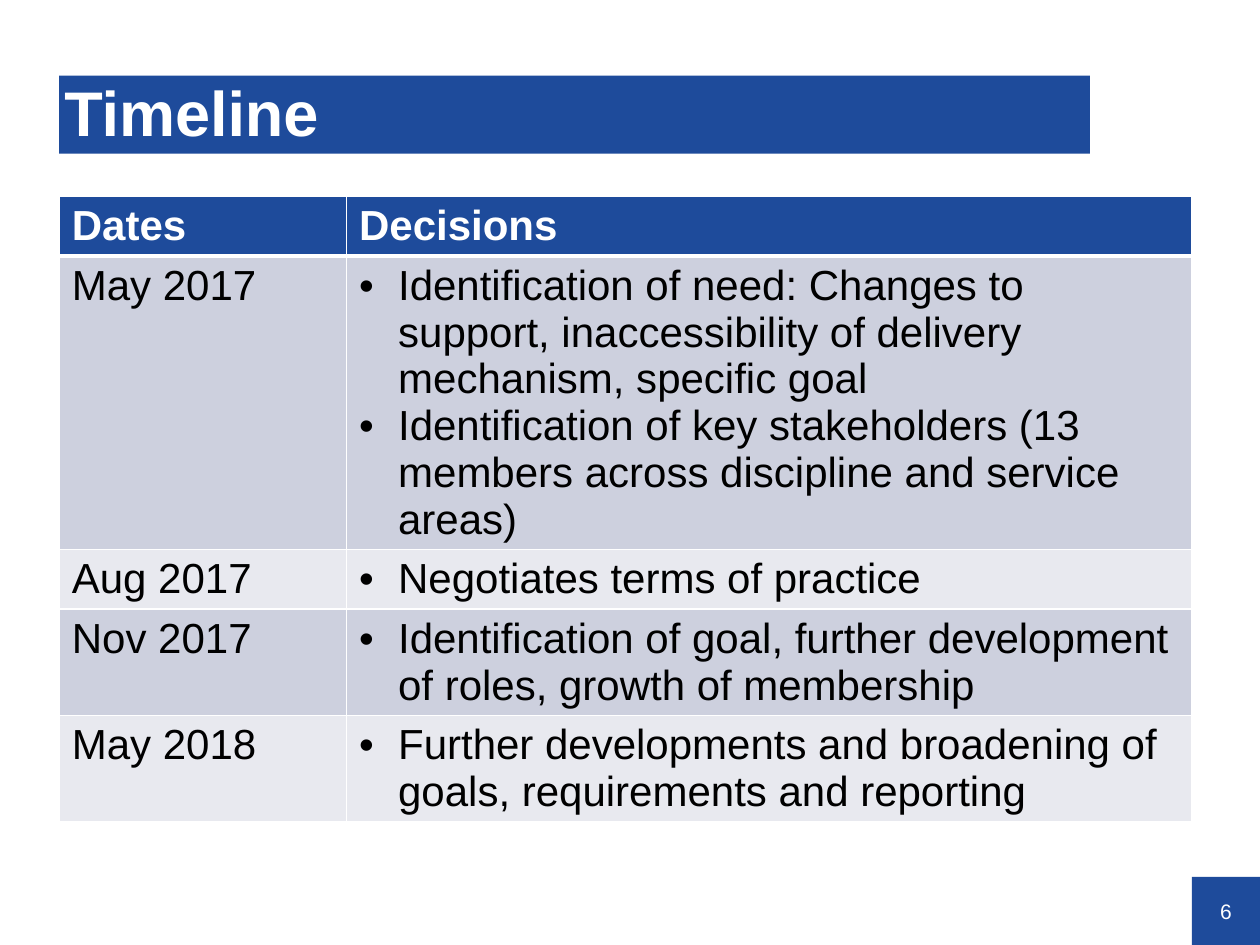
from dataclasses import dataclass
from lxml import etree
from pptx import Presentation
from pptx.dml.color import RGBColor
from pptx.enum.shapes import MSO_SHAPE
from pptx.enum.text import MSO_ANCHOR, MSO_AUTO_SIZE, PP_ALIGN
from pptx.oxml.ns import qn
from pptx.util import Emu, Inches, Pt

RECT = MSO_SHAPE.RECTANGLE
MIDDLE = MSO_ANCHOR.MIDDLE
NOFIT = MSO_AUTO_SIZE.NONE
LEFT, CENTER = PP_ALIGN.LEFT, PP_ALIGN.CENTER

WIDE, HIGH = Inches(10), Inches(7.5)
UNIT = WIDE // 100
BLUE, WHITE, BLACK = "1E4B9B", "FFFFFF", "000000"
BANDS = ("CDD0DE", "E8E9EF")
EDGE, LINE, PAD, DENT = 4.7, 3.7, 1, 3.1
COLS = (22.8, 67.1)


@dataclass
class Box:
    """A place on the grid, in columns and rows."""
    col: float
    row: float
    wide: float
    high: float


@dataclass
class Entry:
    """A date with its decisions and the number of text lines."""
    date: str
    items: list[str]
    lines: int


ENTRIES = [
    Entry("May 2017", [
        "Identification of need: Changes to support, inaccessibility of delivery mechanism, specific goal",
        "Identification of key stakeholders (13 members across discipline and service areas)"], 6),
    Entry("Aug 2017", ["Negotiates terms of practice"], 1),
    Entry("Nov 2017", ["Identification of goal, further development of roles, growth of membership"], 2),
    Entry("May 2018", ["Further developments and broadening of goals, requirements and reporting"], 2),
]


def span(count: float) -> Emu:
    """Turn grid units into a length."""
    return Emu(round(count * UNIT))


def spots(box: Box) -> list[Emu]:
    """Give left, top, width and height of a box."""
    return [span(n) for n in (box.col, box.row, box.wide, box.high)]


def paint(fill, tint: str) -> None:
    """Fill with one solid colour."""
    fill.solid()
    fill.fore_color.rgb = RGBColor.from_string(tint)


def style(para, size: int, tint: str, bold: bool = False) -> None:
    """Format the runs of a paragraph."""
    form = {"name": "Arial", "size": Pt(size), "bold": bold}
    for run in para.runs:
        for key, value in form.items():
            setattr(run.font, key, value)
        run.font.color.rgb = RGBColor.from_string(tint)


def label(shape, text: str, size: int, align, bold: bool, left: float, top: float):
    """Write one line of white text on a blue shape."""
    paint(shape.fill, BLUE)
    shape.line.fill.background()
    frame = shape.text_frame
    form = {"margin_left": span(left), "margin_top": span(top), "margin_right": 0,
            "margin_bottom": 0, "vertical_anchor": MIDDLE, "word_wrap": True,
            "auto_size": NOFIT}
    for key, value in form.items():
        setattr(frame, key, value)
    para = frame.paragraphs[0]
    para.text, para.alignment = text, align
    style(para, size, WHITE, bold)
    return para


def border(cell, base: float) -> None:
    """Draw white cell borders, with the given width at the bottom."""
    props = cell._tc.get_or_add_tcPr()
    for side, width in zip("LRTB", (1, 1, 1, base)):
        line = etree.SubElement(props, qn(f"a:ln{side}"), w=str(Pt(width)))
        fill = etree.SubElement(line, qn("a:solidFill"))
        etree.SubElement(fill, qn("a:srgbClr"), val=WHITE)


def bullet(para) -> None:
    """Give a paragraph a hanging round bullet."""
    props = para._p.get_or_add_pPr()
    props.set("marL", str(span(DENT)))
    props.set("indent", str(-span(DENT)))
    etree.SubElement(props, qn("a:buFont"), typeface="Arial")
    etree.SubElement(props, qn("a:buChar"), char="•")


def write(cell, texts: list[str], fill: str, tint: str, head: bool, dots: bool) -> None:
    """Write paragraphs in a table cell."""
    border(cell, 3 if head else 1)
    paint(cell.fill, fill)
    frame = cell.text_frame
    for spot, text in enumerate(texts):
        para = frame.add_paragraph() if spot else frame.paragraphs[0]
        para.text = text
        if dots:
            bullet(para)
        style(para, 24, tint, head)


def chart(slide, box: Box) -> None:
    """Draw the table of dates and decisions."""
    rows = [Entry("Dates", ["Decisions"], 1), *ENTRIES]
    table = slide.shapes.add_table(len(rows), len(COLS), *spots(box)).table
    for col, wide in zip(table.columns, COLS):
        col.width = span(wide)
    for spot, entry in enumerate(rows):
        head = spot == 0
        table.rows[spot].height = span(PAD + LINE * entry.lines)
        fill = BLUE if head else BANDS[(spot - 1) % 2]
        tint = WHITE if head else BLACK
        write(table.cell(spot, 0), [entry.date], fill, tint, head, False)
        write(table.cell(spot, 1), entry.items, fill, tint, head, not head)


def main() -> None:
    """Build and save the slide."""
    deck = Presentation()
    deck.slide_width, deck.slide_height = WIDE, HIGH
    slide = deck.slides.add_slide(deck.slide_layouts[5])
    badge = slide.shapes.add_shape(RECT, *spots(Box(94.6, 69.6, 5.4, 5.4)))
    badge.shadow.inherit = False
    label(badge, "6", 12, CENTER, False, 0, 0)
    title = slide.shapes.title
    title.left, title.top, title.width, title.height = spots(Box(EDGE, 6, 81.8, 6.2))
    label(title, "Timeline", 36, LEFT, True, 0.4, 0.2).line_spacing = 0.9
    high = sum(PAD + LINE * entry.lines for entry in ENTRIES) + PAD + LINE
    chart(slide, Box(EDGE, 15.6, sum(COLS), high))
    deck.save("out.pptx")


if __name__ == "__main__":
    main()
